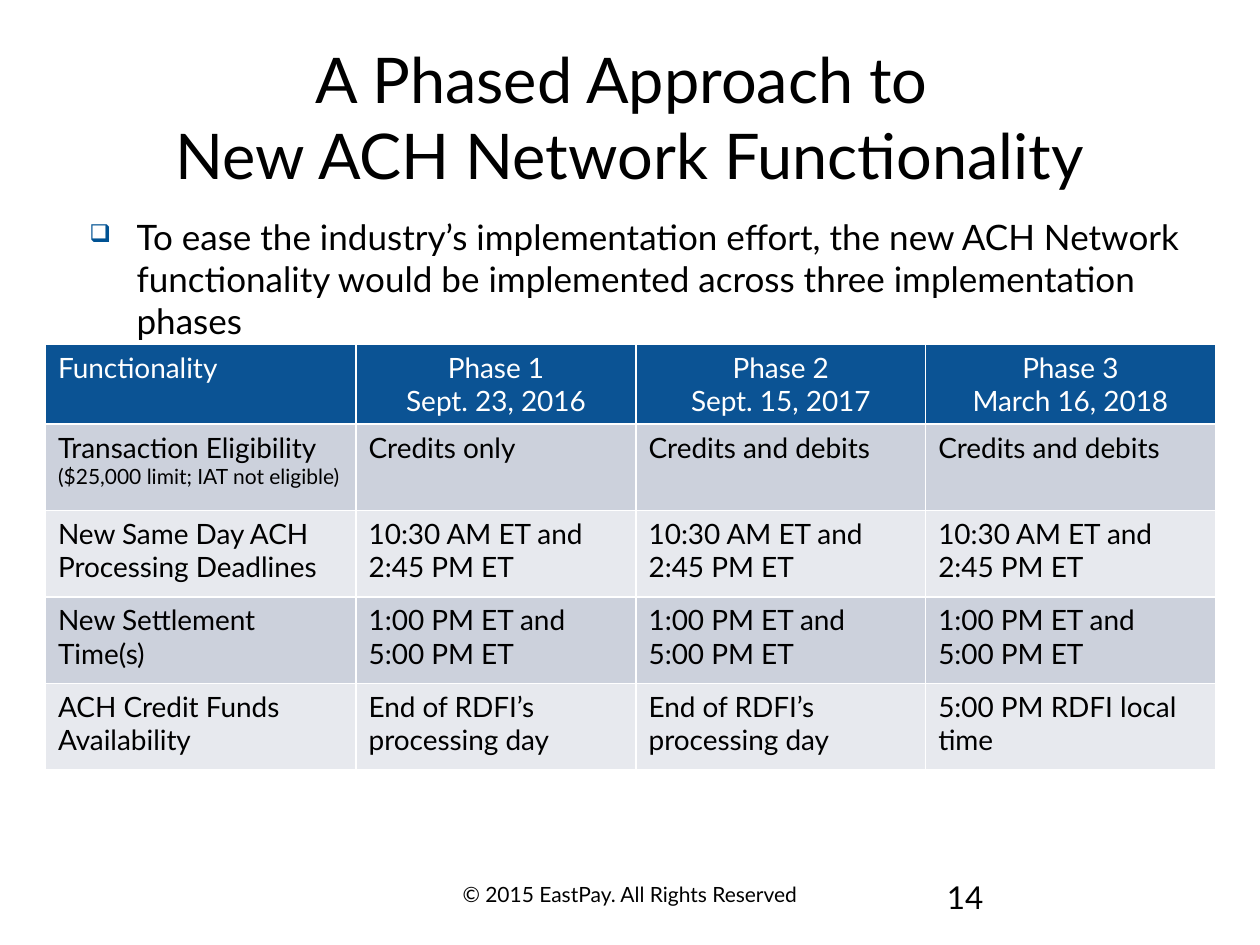
from lxml import etree
from pptx import Presentation
from pptx.dml.color import RGBColor
from pptx.enum.text import MSO_ANCHOR, PP_ALIGN
from pptx.oxml.ns import qn
from pptx.util import Pt

CENTER, LEFT = PP_ALIGN.CENTER, PP_ALIGN.LEFT
TOP, MIDDLE = MSO_ANCHOR.TOP, MSO_ANCHOR.MIDDLE
FONT = "Lato"
COLORS = {
    "text": "000000", "white": "FFFFFF", "bullet": "005293",
    "header": "0B5394", "band_dark": "CCD1DC", "band_light": "E7E9EE",
}


def rgb(name):
    return RGBColor.from_string(COLORS[name])


def write(tf, text, size=16, color="text", align=LEFT, note="", note_size=12):
    """Fill a text frame: \\n starts a paragraph, \\v breaks a line."""
    for i, line in enumerate(text.split("\n")):
        p = tf.paragraphs[0] if i == 0 else tf.add_paragraph()
        p.text = line
        p.alignment = align
        sized = [(r, size) for r in p.runs]
        if note:
            r = p.add_run()
            r.text = note
            sized.append((r, note_size))
        for r, points in sized:
            r.font.name, r.font.size, r.font.bold = FONT, Pt(points), False
            r.font.color.rgb = rgb(color)


def add_bullet(p, char, indent, color, percent):
    pPr = p._p.get_or_add_pPr()
    pPr.set("marL", str(Pt(indent)))
    pPr.set("indent", str(-Pt(indent)))
    clr = etree.SubElement(pPr, qn("a:buClr"))
    etree.SubElement(clr, qn("a:srgbClr"), val=COLORS[color])
    etree.SubElement(pPr, qn("a:buSzPct"), val=str(percent * 1000))
    etree.SubElement(pPr, qn("a:buChar"), char=char)


def add_borders(cell, color, width):
    tcPr = cell._tc.get_or_add_tcPr()
    for i, side in enumerate(("lnL", "lnR", "lnT", "lnB")):
        ln = etree.Element(qn("a:" + side), w=str(Pt(width)))
        fill = etree.SubElement(ln, qn("a:solidFill"))
        etree.SubElement(fill, qn("a:srgbClr"), val=COLORS[color])
        tcPr.insert(i, ln)


class Deck:
    def __init__(self, width, height):
        self.prs = Presentation()
        self.prs.slide_width, self.prs.slide_height = Pt(width), Pt(height)
        self.slide = self.prs.slides.add_slide(self.prs.slide_layouts[5])

    def title(self, text, x, y, w, h):
        sp = self.slide.shapes.title
        sp.left, sp.top, sp.width, sp.height = Pt(x), Pt(y), Pt(w), Pt(h)
        sp.text_frame.vertical_anchor = MIDDLE
        write(sp.text_frame, text, size=36, align=CENTER)

    def text(self, text, x, y, w, h, **style):
        sp = self.slide.shapes.add_textbox(Pt(x), Pt(y), Pt(w), Pt(h))
        tf = sp.text_frame
        tf.word_wrap = True
        tf.vertical_anchor = TOP
        write(tf, text, **style)
        return tf

    def table(self, rows, x, y, widths, heights, notes):
        frame = self.slide.shapes.add_table(
            len(rows), len(widths), Pt(x), Pt(y), Pt(sum(widths)), Pt(sum(heights)))
        table = frame.table
        table.horz_banding = False
        for column, width in zip(table.columns, widths):
            column.width = Pt(width)
        for i, (row, height) in enumerate(zip(rows, heights)):
            table.rows[i].height = Pt(height)
            band = "header" if i == 0 else ("band_light", "band_dark")[i % 2]
            for j, text in enumerate(row):
                cell = table.cell(i, j)
                cell.fill.solid()
                cell.fill.fore_color.rgb = rgb(band)
                add_borders(cell, "white", 1)
                write(cell.text_frame, text,
                      color="white" if i == 0 else "text",
                      align=CENTER if i == 0 and j > 0 else LEFT,
                      note=notes.get((i, j), ""))


def main():
    deck = Deck(720, 540)

    # Title and introduction
    deck.title("A Phased Approach to \vNew ACH Network Functionality", 36, 21.6, 648, 90)
    intro = deck.text(
        "To ease the industry’s implementation effort, the new ACH Network "
        "functionality would be implemented across three implementation phases",
        44, 119.5, 648, 76, size=20)
    add_bullet(intro.paragraphs[0], "❑", 27, "bullet", 70)

    # Phase table
    deadlines = "10:30 AM ET and\n2:45 PM ET"
    settlement = "1:00 PM ET and\n5:00 PM ET"
    end_of_day = "End of RDFI’s processing day"
    rows = [
        ["Functionality", "Phase 1\nSept. 23, 2016", "Phase 2\nSept. 15, 2017",
         "Phase 3\nMarch 16, 2018"],
        ["Transaction Eligibility ", "Credits only"] + ["Credits and debits"] * 2,
        ["New Same Day ACH Processing Deadlines"] + [deadlines] * 3,
        ["New Settlement Time(s)"] + [settlement] * 3,
        ["ACH Credit Funds Availability", end_of_day, end_of_day,
         "5:00 PM RDFI local time"],
    ]
    deck.table(rows, 26, 196.8, [177.5, 160, 165.5, 165.5], [45] + [49.4] * 4,
               notes={(1, 0): "($25,000 limit; IAT not eligible)"})

    # Footer and slide number
    deck.text("© 2015 EastPay. All Rights Reserved", 246, 500.4, 228, 28.8,
              size=12, align=CENTER)
    deck.text("14", 534, 498.2, 168, 28.8, size=18)

    deck.prs.save("out.pptx")


if __name__ == "__main__":
    main()
